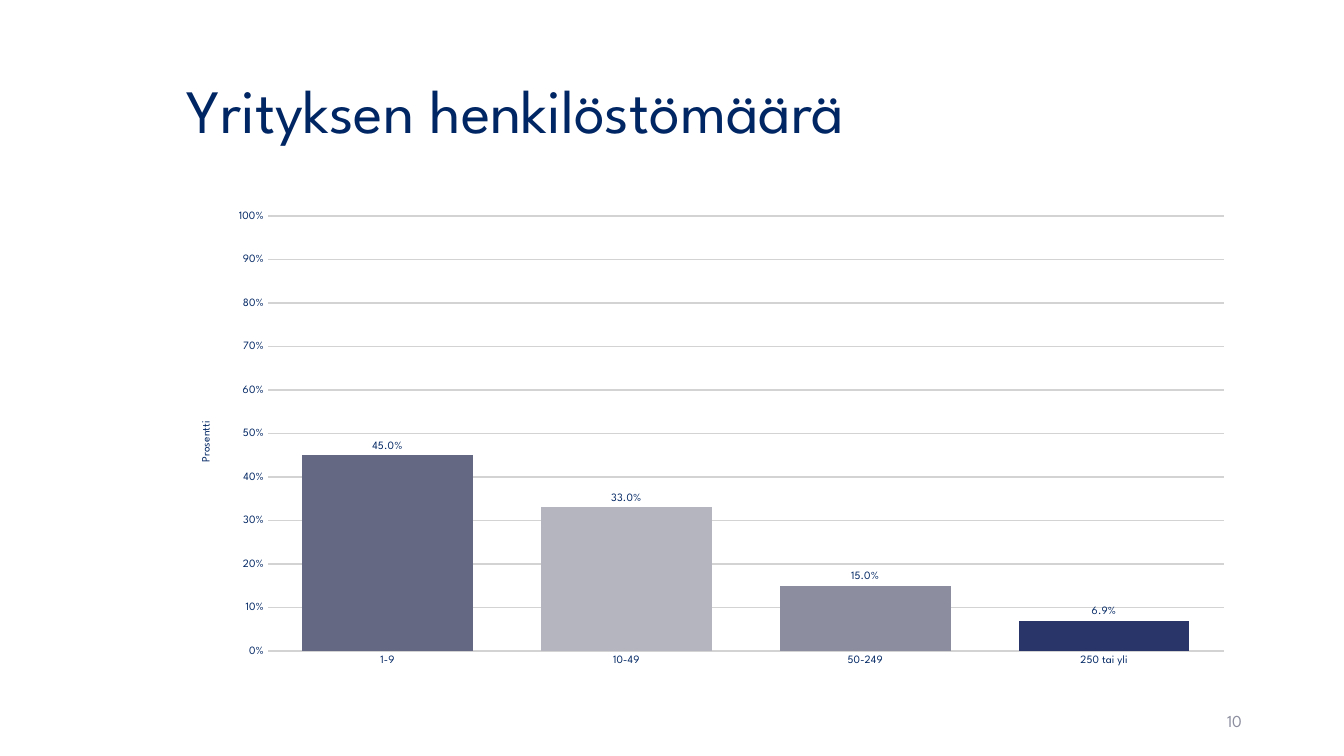
from lxml import etree
from pptx import Presentation
from pptx.chart.data import CategoryChartData
from pptx.dml.color import RGBColor
from pptx.enum.chart import XL_CHART_TYPE, XL_LABEL_POSITION, XL_TICK_MARK
from pptx.enum.text import MSO_ANCHOR, MSO_AUTO_SIZE, PP_ALIGN
from pptx.oxml.ns import qn
from pptx.util import Pt

COLUMNS = XL_CHART_TYPE.COLUMN_CLUSTERED
OUTSIDE = XL_LABEL_POSITION.OUTSIDE_END
NO_TICK = XL_TICK_MARK.NONE
MIDDLE = MSO_ANCHOR.MIDDLE
NO_FIT = MSO_AUTO_SIZE.NONE
LEFT, RIGHT = PP_ALIGN.LEFT, PP_ALIGN.RIGHT

NAVY = "002663"
GREY = "8C8E9F"
GRID = "D3D3D3"
# Company size: share of answers, column colour
SIZES = {
    "1-9": (0.45, "646883"),
    "10-49": (0.33, "B4B5BF"),
    "50-249": (0.15, GREY),
    "250 tai yli": (0.069, "293568"),
}


def rgb(value):
    return RGBColor.from_string(value)


def set_layout(element, index, **fractions):
    """Place a chart part by fractions of the chart's size."""
    old = element.find(qn("c:layout"))
    if old is not None:
        element.remove(old)
    layout = etree.Element(qn("c:layout"))
    manual = etree.SubElement(layout, qn("c:manualLayout"))
    if "w" in fractions:
        etree.SubElement(manual, qn("c:layoutTarget")).set("val", "inner")
    for mode in ("xMode", "yMode"):
        etree.SubElement(manual, qn(f"c:{mode}")).set("val", "edge")
    for name, value in fractions.items():
        etree.SubElement(manual, qn(f"c:{name}")).set("val", str(value))
    element.insert(index, layout)


class SlideBuilder:
    font_name = "League Spartan"

    def __init__(self, prs):
        self.slide = prs.slides.add_slide(prs.slide_layouts[5])

    def style(self, font, size, color=NAVY):
        font.name = self.font_name
        font.size = Pt(size)
        font.bold = False
        font.color.rgb = rgb(color)

    def fill_text(self, sp, text, size, color, align):
        tf = sp.text_frame
        tf.text = text
        tf.word_wrap = True
        tf.auto_size = NO_FIT
        tf.vertical_anchor = MIDDLE
        p = tf.paragraphs[0]
        p.alignment = align
        self.style(p.runs[0].font, size, color)
        return p

    def title(self, text, x, y, w, h):
        sp = self.slide.shapes.title
        sp.left, sp.top, sp.width, sp.height = Pt(x), Pt(y), Pt(w), Pt(h)
        self.fill_text(sp, text, 44, NAVY, LEFT).line_spacing = 0.9

    def text(self, text, x, y, w, h):
        sp = self.slide.shapes.add_textbox(Pt(x), Pt(y), Pt(w), Pt(h))
        self.fill_text(sp, text, 12, GREY, RIGHT).space_after = Pt(6)

    def column_chart(self, x, y, w, h):
        data = CategoryChartData(number_format="0.0%")
        data.categories = list(SIZES)
        data.add_series("Series 1", [share for share, _ in SIZES.values()])
        chart = self.slide.shapes.add_chart(
            COLUMNS, Pt(x), Pt(y), Pt(w), Pt(h), data).chart
        chart.has_legend = False
        chart.has_title = False
        self.style(chart.font, 18)
        self.columns(chart.plots[0])
        for axis in (chart.category_axis, chart.value_axis):
            axis.major_tick_mark = axis.minor_tick_mark = NO_TICK
            axis.format.line.fill.background()
            self.style(axis.tick_labels.font, 8)
        self.value_axis(chart.value_axis)
        plot_area = chart.plots[0]._element.getparent()
        set_layout(plot_area, 0, x=0.086, y=0.03, w=0.895, h=0.907)

    def columns(self, plot):
        plot.gap_width = 40
        plot.overlap = -2
        plot.vary_by_categories = False
        series = plot.series[0]
        for i, (_, color) in enumerate(SIZES.values()):
            fill = series.points[i].format.fill
            fill.solid()
            fill.fore_color.rgb = rgb(color)
        labels = series.data_labels
        labels.show_value = True
        labels.number_format = "0.0%"
        labels.number_format_is_linked = False
        labels.position = OUTSIDE
        self.style(labels.font, 8)

    def value_axis(self, axis):
        axis.minimum_scale, axis.maximum_scale = 0, 1
        axis.major_unit = 0.1
        axis.tick_labels.number_format = "0%"
        axis.tick_labels.number_format_is_linked = False
        axis.has_major_gridlines = True
        line = axis.major_gridlines.format.line
        line.color.rgb = rgb(GRID)
        line.width = Pt(1)
        tf = axis.axis_title.text_frame
        tf.text = "Prosentti"
        self.style(tf.paragraphs[0].runs[0].font, 8)
        body = tf._txBody.find(qn("a:bodyPr"))
        body.set("rot", "-5400000")
        body.set("vert", "horz")
        set_layout(axis.axis_title._element, 1, x=0.02, y=0.453)


def main():
    prs = Presentation()
    prs.slide_width, prs.slide_height = Pt(960), Pt(540)
    s = SlideBuilder(prs)
    s.title("Yrityksen henkilöstömäärä", 126, 28.8, 762.5, 104.4)
    s.text("10", 678.24, 500.4, 216, 28.8)
    s.column_chart(126, 144, 762.5, 342.7)
    prs.save("out.pptx")


if __name__ == "__main__":
    main()
